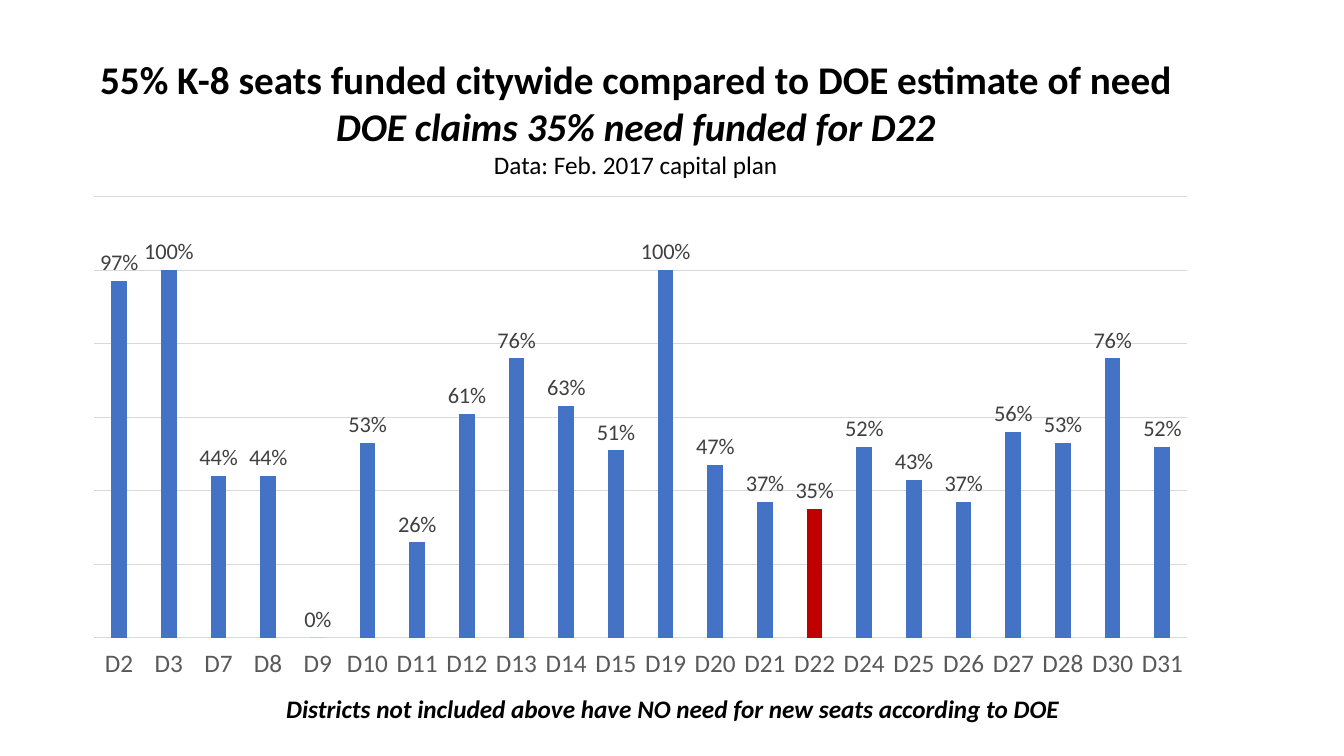
"""Build a slide on the share of K-8 seats funded in each district."""
from dataclasses import dataclass

from pptx import Presentation
from pptx.chart.data import CategoryChartData as ChartData
from pptx.dml.color import RGBColor as RGB
from pptx.enum.chart import XL_CHART_TYPE as Kind
from pptx.enum.chart import XL_LABEL_POSITION as Spot
from pptx.enum.chart import XL_TICK_LABEL_POSITION as Place
from pptx.enum.chart import XL_TICK_MARK as Tick
from pptx.enum.text import MSO_ANCHOR as Anchor
from pptx.enum.text import MSO_AUTO_SIZE as Fit
from pptx.enum.text import PP_ALIGN as Align
from pptx.slide import Slide
from pptx.text.text import Font, TextFrame
from pptx.util import Inches, Pt

FONT = "Calibri"
HUES = {
    "text": "000000",
    "axis": "595959",
    "label": "404040",
    "grid": "D9D9D9",
    "bar": "4472C4",
    "focus": "C00000",
}
FOCUS = "D22"
SHARES = {
    "D2": 0.97, "D3": 1, "D7": 0.44, "D8": 0.44, "D9": 0, "D10": 0.53,
    "D11": 0.26, "D12": 0.61, "D13": 0.76, "D14": 0.63, "D15": 0.51,
    "D19": 1, "D20": 0.47, "D21": 0.37, "D22": 0.35, "D24": 0.52,
    "D25": 0.43, "D26": 0.37, "D27": 0.56, "D28": 0.53, "D30": 0.76,
    "D31": 0.52,
}


@dataclass(frozen=True)
class Line:
    """Hold one line of text and its style."""
    text: str
    size: int
    bold: bool = False
    slant: bool = False


TITLE = [
    Line("55% K-8 seats funded citywide compared to DOE estimate of need", 28, True),
    Line("DOE claims 35% need funded for D22", 28, True, True),
    Line("Data: Feb. 2017 capital plan", 18),
]
NOTE = [
    Line("Districts not included above have NO need for new seats according to DOE",
         18, True, True),
]


def hue(name: str) -> RGB:
    """Return the named colour."""
    return RGB.from_string(HUES[name])


def style(font: Font, size: int, name: str) -> None:
    """Set the face, size and colour of a font."""
    font.name = FONT
    font.size = Pt(size)
    font.color.rgb = hue(name)


def write(frame: TextFrame, lines: list[Line], align: Align) -> None:
    """Fill a frame with one paragraph for each line."""
    frame.word_wrap = True
    frame.auto_size = Fit.NONE
    frame.vertical_anchor = Anchor.TOP
    for i, line in enumerate(lines):
        para = frame.add_paragraph() if i else frame.paragraphs[0]
        para.alignment = align
        run = para.add_run()
        run.text = line.text
        style(run.font, line.size, "text")
        run.font.bold = line.bold
        run.font.italic = line.slant


def box(*sides: float) -> list[Inches]:
    """Turn left, top, width and height into lengths."""
    return [Inches(side) for side in sides]


def plot(slide: Slide) -> None:
    """Draw the column chart of funded shares."""
    data = ChartData(number_format="0%")
    data.categories = list(SHARES)
    data.add_series("Series 1", list(SHARES.values()))
    chart = slide.shapes.add_chart(
        Kind.COLUMN_CLUSTERED, *box(0.71, 1.85, 11.29, 4.98), data).chart
    chart.has_title = chart.has_legend = False
    style(chart.font, 10, "text")

    base = chart.category_axis
    base.major_tick_mark = base.minor_tick_mark = Tick.NONE
    base.tick_label_position = Place.LOW
    style(base.tick_labels.font, 18, "axis")

    scale = chart.value_axis
    scale.visible = False
    scale.minimum_scale, scale.maximum_scale, scale.major_unit = 0, 1.2, 0.2
    scale.has_major_gridlines = True
    for rule in (base.format.line, scale.major_gridlines.format.line):
        rule.color.rgb = hue("grid")
        rule.width = Pt(0.75)

    bars = chart.plots[0]
    bars.gap_width, bars.overlap, bars.vary_by_categories = 219, -27, False
    row = bars.series[0]
    row.invert_if_negative = False
    point = row.points[list(SHARES).index(FOCUS)]
    for part, name in ((row, "bar"), (point, "focus")):
        part.format.fill.solid()
        part.format.fill.fore_color.rgb = hue(name)

    tags = row.data_labels
    tags.show_value = True
    tags.position = Spot.OUTSIDE_END
    tags.number_format, tags.number_format_is_linked = "0%", False
    style(tags.font, 16, "label")


def main() -> None:
    """Build and save the slide."""
    deck = Presentation()
    deck.slide_width, deck.slide_height = Inches(13.33), Inches(7.5)
    slide = deck.slides.add_slide(deck.slide_layouts[5])
    plot(slide)
    title = slide.shapes.title
    title.left, title.top, title.width, title.height = box(0.71, 0.5, 11.19, 1.35)
    write(title.text_frame, TITLE, Align.CENTER)
    note = slide.shapes.add_textbox(*box(2.74, 6.83, 10.5, 0.6))
    write(note.text_frame, NOTE, Align.LEFT)
    deck.save("out.pptx")


if __name__ == "__main__":
    main()
